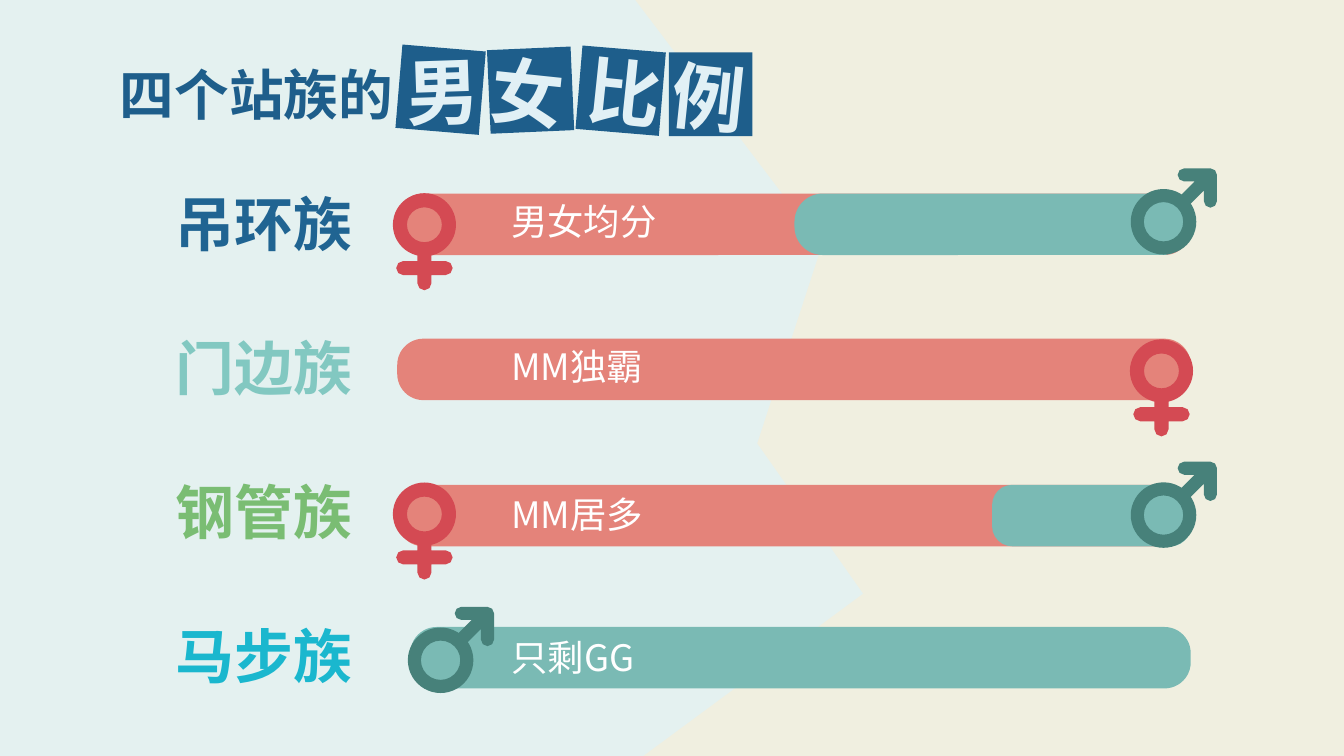
from collections import namedtuple
from math import cos, radians, sin

from pptx import Presentation
from pptx.dml.color import RGBColor
from pptx.enum.shapes import MSO_SHAPE
from pptx.enum.text import MSO_AUTO_SIZE
from pptx.util import Inches, Pt

RECTANGLE = MSO_SHAPE.RECTANGLE
ROUNDED = MSO_SHAPE.ROUNDED_RECTANGLE
DONUT = MSO_SHAPE.DONUT
GROW = MSO_AUTO_SIZE.SHAPE_TO_FIT_TEXT

SLIDE_WIDTH, SLIDE_HEIGHT = Inches(13.33), Inches(7.5)
# The slide is a grid of square cells, 75 rows high; all lengths are in cells.
ROWS = 75
CELL = SLIDE_HEIGHT / ROWS
COLUMNS = SLIDE_WIDTH / CELL
FONT = "Noto Sans CJK SC"

COLORS = {
    "cream": "F0EFE0", "mist": "E4F1F0", "title": "1E5E8B", "tile_text": "E1F0F5",
    "navy": "206492", "mint": "82C8C1", "green": "7ABD73", "cyan": "1AB7CE",
    "female_bar": "E4837A", "male_bar": "7ABAB4",
    "female": "D44A53", "male": "47817A", "white": "FFFFFF",
}

Box = namedtuple("Box", "left top width height")
Bar = namedtuple("Bar", "gender left right corner")
Symbol = namedtuple("Symbol", "gender x y")
Group = namedtuple("Group", "label color caption caption_top bar_top bars symbols")
Tile = namedtuple("Tile", "character turn drop text_shift text_drop text_turn")

# Places are measured from the top left of each group's row.
GROUPS = [
    Group("吊环族", "navy", "男女均分", 1.2, 0.6,
          [Bar("female", 22, 100.7, 2.6), Bar("male", 61.4, 100.7, 2.8)],
          [Symbol("female", 24.7, 3.7), Symbol("male", 98, 3.4)]),
    Group("门边族", "mint", "MM独霸", 1.2, 0.7,
          [Bar("female", 22, 100.7, 2.6)],
          [Symbol("female", 97.8, 3.9)]),
    Group("钢管族", "green", "MM居多", 1.6, 0.9,
          [Bar("female", 22, 100.7, 2.6), Bar("male", 81, 100.7, 2)],
          [Symbol("female", 24.7, 3.8), Symbol("male", 98, 3.9)]),
    Group("马步族", "cyan", "只剩GG", 1.5, 0.7,
          [Bar("male", 23.3, 100.7, 2.6)],
          [Symbol("male", 26.3, 4)]),
]

TILES = [
    Tile("男", 4.8, 0, 0.85, 0, -2),
    Tile("女", -2.5, 0.05, 0.1, 0.2, 6),
    Tile("比", 4.8, 0.1, 0.8, 0.2, 6),
    Tile("例", 0, 0.45, 0.15, 0.7, 6),
]


def cells(*lengths):
    return [round(length * CELL) for length in lengths]


def paint(shape, color):
    shape.shadow.inherit = False
    shape.fill.solid()
    shape.fill.fore_color.rgb = RGBColor.from_string(COLORS[color])
    shape.line.fill.background()


def add_preset(slide, preset, box, color, rotation=0, adjustment=None):
    shape = slide.shapes.add_shape(preset, *cells(*box))
    shape.rotation = rotation
    if adjustment is not None:
        shape.adjustments[0] = adjustment
    paint(shape, color)


def add_outline(slide, points, color, x=0, y=0):
    start, *rest = [cells(x + dx, y + dy) for dx, dy in points]
    builder = slide.shapes.build_freeform(*start)
    builder.add_line_segments(rest, close=True)
    paint(builder.convert_to_shape(), color)


def add_text(slide, text, box, size, color, bold=False, rotation=0, wrap=True):
    text_box = slide.shapes.add_textbox(*cells(*box))
    text_box.rotation = rotation
    frame = text_box.text_frame
    frame.word_wrap = wrap
    frame.auto_size = GROW
    frame.margin_left = frame.margin_right = 0
    frame.margin_top = frame.margin_bottom = 0
    run = frame.paragraphs[0].add_run()
    run.text = text
    run.font.name = FONT
    run.font.size = Pt(size)
    run.font.bold = bold
    run.font.color.rgb = RGBColor.from_string(COLORS[color])


def cap(x, y, radius, start, end, steps=4):
    """Points of a rounded end; angles in degrees run clockwise from the right."""
    angles = [radians(start + (end - start) * step / steps) for step in range(steps + 1)]
    return [(x + radius * cos(angle), y + radius * sin(angle)) for angle in angles]


# Ring radius and limb outline of each symbol, around the centre of its ring
RINGS = {"female": 3.13, "male": 3.25}
RING_THICKNESS = {"female": 1.4, "male": 1.3}
LIMBS = {
    "female": [
        (-0.7, 2.5), (0.7, 2.5), (0.7, 3.6), *cap(2.1, 4.3, 0.7, -90, 90),
        (0.7, 5), *cap(0, 5.8, 0.7, 0, 180),
        (-0.7, 5), *cap(-2.1, 4.3, 0.7, 90, 270), (-0.7, 3.6),
    ],
    "male": [
        (1.5, -2.4), (2.4, -1.5), (4, -3.1), *cap(4.65, -2.05, 0.65, 180, 0),
        *cap(4.65, -4.65, 0.65, 0, -90, 2),
        *cap(2.05, -4.65, 0.65, 270, 90), (3.1, -4),
    ],
}


def add_symbol(slide, gender, x, y):
    radius = RINGS[gender]
    ring_box = Box(x - radius, y - radius, 2 * radius, 2 * radius)
    add_preset(slide, DONUT, ring_box, gender,
               adjustment=RING_THICKNESS[gender] / (2 * radius))
    add_outline(slide, LIMBS[gender], gender, x, y)


def add_background(slide, box):
    add_preset(slide, RECTANGLE, box, "cream")
    edge = [(63, 0), (81.5, 24.4), (75.1, 44), (85.6, 58.9), (63.8, 75)]
    add_outline(slide, [(0, 0), *edge, (0, box.height)], "mist", box.left, box.top)


def add_title(slide, box):
    side, pitch = 8.3, 8.93
    lead_box = Box(box.left, box.top + 1.6, 27.3, 6.6)
    add_text(slide, "四个站族的", lead_box, 39, "title", bold=True)
    lefts = [box.left + 27.65 + pitch * index for index in range(len(TILES))]
    for left, tile in zip(lefts, TILES):
        tile_box = Box(left, box.top + 0.35 + tile.drop, side, side)
        add_preset(slide, RECTANGLE, tile_box, "title", rotation=tile.turn)
    for left, tile in zip(lefts, TILES):
        text_box = Box(left + tile.text_shift, box.top + 0.2 + tile.text_drop, 9.1, 11.4)
        add_text(slide, tile.character, text_box, 52, "tile_text",
                 bold=True, rotation=tile.text_turn, wrap=False)


def add_group(slide, group, box):
    bar_height = 6.1
    add_text(slide, group.label, Box(box.left, box.top, 19.7, 7.1), 42, group.color, bold=True)
    for bar in group.bars:
        bar_box = Box(box.left + bar.left, box.top + group.bar_top,
                      bar.right - bar.left, bar_height)
        add_preset(slide, ROUNDED, bar_box, bar.gender + "_bar",
                   adjustment=bar.corner / bar_height)
    caption_box = Box(box.left + 33.3, box.top + group.caption_top, 17.3, 4.4)
    add_text(slide, group.caption, caption_box, 26, "white")
    for symbol in group.symbols:
        add_symbol(slide, symbol.gender, box.left + symbol.x, box.top + symbol.y)


def main():
    presentation = Presentation()
    presentation.slide_width, presentation.slide_height = SLIDE_WIDTH, SLIDE_HEIGHT
    slide = presentation.slides.add_slide(presentation.slide_layouts[6])
    add_background(slide, Box(0, 0, COLUMNS, ROWS))
    add_title(slide, Box(11.9, 4.4, 62.7, 9.1))
    row_pitch = 14.3
    for index, group in enumerate(GROUPS):
        add_group(slide, group, Box(17.4, 18.6 + row_pitch * index, 103.3, row_pitch))
    presentation.save("out.pptx")


if __name__ == "__main__":
    main()
